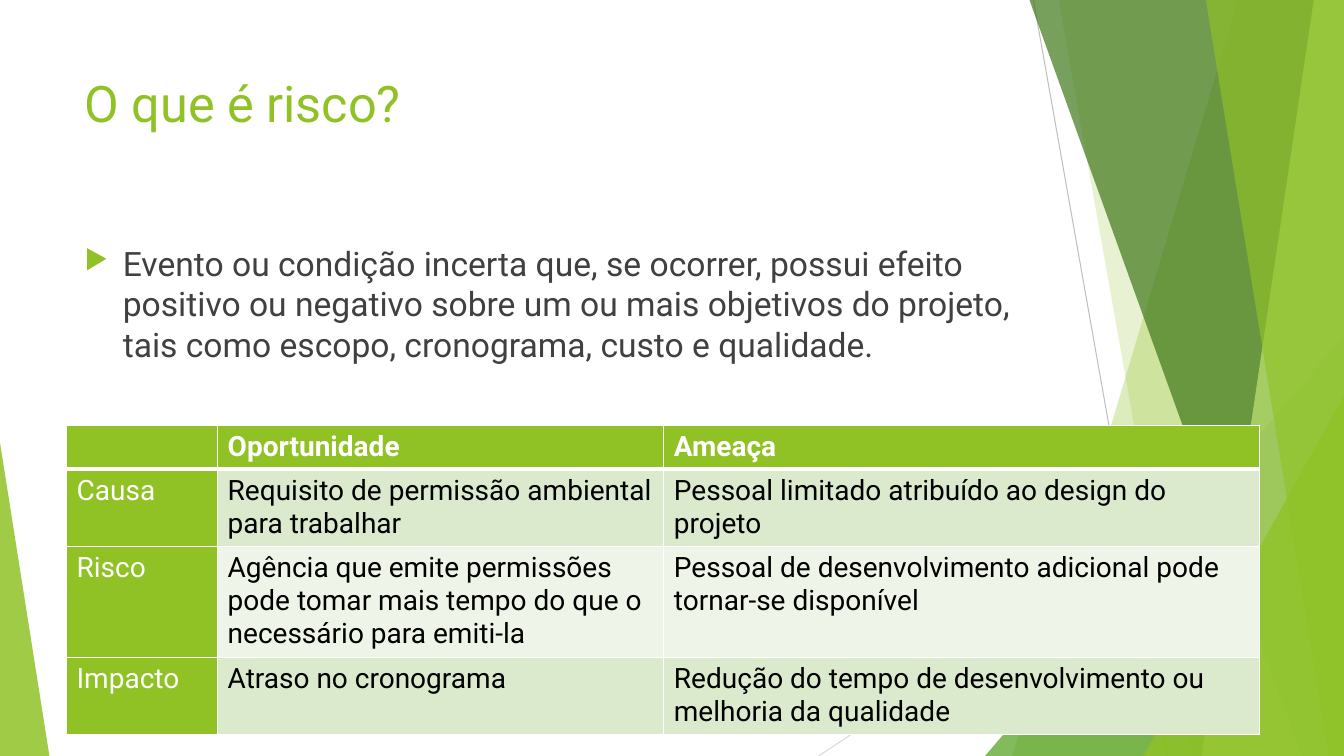
from lxml.etree import SubElement
from pptx import Presentation
from pptx.dml.color import RGBColor
from pptx.enum.shapes import MSO_CONNECTOR, MSO_SHAPE
from pptx.enum.text import MSO_ANCHOR
from pptx.oxml.ns import qn
from pptx.util import Inches, Pt

WIDTH, HEIGHT = 13.33, 7.5
FONT = "Roboto"
COLORS = {
    "green": "90C226",
    "leaf": "54A021",
    "forest": "3F7819",
    "lime": "C0E474",
    "band": "DBE9CD",
    "pale_band": "EEF4E8",
    "text": "404040",
    "black": "000000",
    "white": "FFFFFF",
    "gray": "BFBFBF",
    "light_gray": "D9D9D9",
}
RISK_ROWS = [
    ("", "Oportunidade", "Ameaça"),
    ("Causa", "Requisito de permissão ambiental para trabalhar",
     "Pessoal limitado atribuído ao design do projeto"),
    ("Risco", "Agência que emite permissões pode tomar mais tempo do que o necessário para emiti-la",
     "Pessoal de desenvolvimento adicional pode tornar-se disponível"),
    ("Impacto", "Atraso no cronograma",
     "Redução do tempo de desenvolvimento ou melhoria da qualidade"),
]
COLUMN_SHARES = (1.5, 4.43, 5.91)
ROW_SHARES = (0.41, 0.76, 1.08, 0.76)


def rgb(color):
    return RGBColor.from_string(COLORS[color])


def style_font(paragraph, size, color, bold=False):
    font = paragraph.font
    font.name, font.size, font.bold = FONT, Pt(size), bold
    font.color.rgb = rgb(color)


def paint(facet, color, opacity):
    facet.shadow.inherit = False
    facet.fill.solid()
    facet.fill.fore_color.rgb = rgb(color)
    tint = facet.fill._xPr.find(qn("a:solidFill"))[0]
    SubElement(tint, qn("a:alpha"), val=str(opacity * 1000))
    facet.line.fill.background()


def add_ray(slide, start, end, color):
    ray = slide.shapes.add_connector(
        MSO_CONNECTOR.STRAIGHT, *(Inches(v) for v in (*start, *end)))
    ray.line.color.rgb = rgb(color)
    ray.line.width = Pt(0.75)
    SubElement(ray._element.spPr, qn("a:effectLst"))


def add_blade(slide, box, top_x, bottom_x, color, opacity):
    left, top, width, height = box
    right, bottom = left + width, top + height
    corners = [(Inches(x), Inches(y)) for x, y in (
        (top_x, top), (right, top), (right, bottom), (bottom_x, bottom))]
    outline = slide.shapes.build_freeform(*corners[0])
    outline.add_line_segments(corners[1:], close=True)
    paint(outline.convert_to_shape(), color, opacity)


def add_wedge(slide, box, apex, color, opacity):
    wedge = slide.shapes.add_shape(
        MSO_SHAPE.ISOSCELES_TRIANGLE, *(Inches(v) for v in box))
    wedge.adjustments[0] = apex
    paint(wedge, color, opacity)


def add_backdrop(slide, box):
    left, top, width, height = box
    right, bottom = left + width, top + height

    def corner_wedge(wide, high, color, opacity):
        add_wedge(slide, (right - wide, bottom - high, wide, high), 1, color, opacity)

    add_ray(slide, (right - 3.08, top), (right - 1.75, bottom), "gray")
    add_ray(slide, (right, bottom - 3.47), (right - 5.21, bottom), "light_gray")
    add_blade(slide, box, right - 1.05, right - 3.29, "green", 30)
    add_blade(slide, box, right - 2.83, right - 1.5, "green", 20)
    corner_wedge(3.56, 4.17, "leaf", 72)
    add_blade(slide, box, right - 3.12, right - 0.42, "forest", 70)
    add_blade(slide, box, right - 0.3, right - 1.41, "lime", 70)
    add_blade(slide, box, right - 1.37, right - 0.15, "green", 65)
    corner_wedge(1.99, 3.57, "green", 80)
    add_wedge(slide, (left, bottom - 3.11, 0.49, 3.11), 0, "green", 85)


def add_text(slide, box, text, size, color, anchor=MSO_ANCHOR.TOP):
    frame = slide.shapes.add_textbox(*(Inches(v) for v in box)).text_frame
    frame.word_wrap = True
    frame.vertical_anchor = anchor
    paragraph = frame.paragraphs[0]
    paragraph.text = text
    return paragraph


def add_heading(slide, box):
    heading = add_text(slide, box, "O que é risco?", 36, "green")
    style_font(heading, 36, "green")


def add_definition(slide, box):
    definition = add_text(
        slide, box,
        "Evento ou condição incerta que, se ocorrer, possui efeito positivo ou negativo "
        "sobre um ou mais objetivos do projeto, tais como escopo, cronograma, custo e qualidade.",
        24, "text")
    properties = definition._p.get_or_add_pPr()
    properties.set("marL", str(Inches(0.38)))
    properties.set("indent", str(-Inches(0.38)))
    bullet_color = SubElement(properties, qn("a:buClr"))
    SubElement(bullet_color, qn("a:srgbClr"), val=COLORS["green"])
    SubElement(properties, qn("a:buSzPct"), val="80000")
    SubElement(properties, qn("a:buChar"), char="▶")
    style_font(definition, 24, "text")


def add_borders(cell, bottom_width):
    properties = cell._tc.get_or_add_tcPr()
    for side, width in (("L", 1), ("R", 1), ("T", 1), ("B", bottom_width)):
        border = SubElement(properties, qn(f"a:ln{side}"), w=str(Pt(width)))
        fill = SubElement(border, qn("a:solidFill"))
        SubElement(fill, qn("a:srgbClr"), val=COLORS["white"])


def add_risk_table(slide, box):
    left, top, width, height = box
    table = slide.shapes.add_table(
        len(RISK_ROWS), len(COLUMN_SHARES), *(Inches(v) for v in box)).table
    table.horz_banding = False
    for column, share in zip(table.columns, COLUMN_SHARES):
        column.width = Inches(width * share / sum(COLUMN_SHARES))
    for row, share in zip(table.rows, ROW_SHARES):
        row.height = Inches(height * share / sum(ROW_SHARES))
    for r, texts in enumerate(RISK_ROWS):
        for c, text in enumerate(texts):
            cell = table.cell(r, c)
            is_label = r == 0 or c == 0
            add_borders(cell, 3 if r == 0 else 1)
            cell.fill.solid()
            cell.fill.fore_color.rgb = rgb(
                "green" if is_label else "band" if r % 2 else "pale_band")
            cell.text = text
            style_font(cell.text_frame.paragraphs[0], 20,
                       "white" if is_label else "black", bold=r == 0)


def main():
    presentation = Presentation()
    presentation.slide_width = Inches(WIDTH)
    presentation.slide_height = Inches(HEIGHT)
    slide = presentation.slides.add_slide(presentation.slide_layouts[6])
    add_backdrop(slide, (0, 0, WIDTH, HEIGHT))
    add_heading(slide, (0.74, 0.67, 9.4, 1.44))
    add_definition(slide, (0.74, 2.36, 9.4, 4.24))
    add_risk_table(slide, (0.66, 4.22, 11.83, 3.01))
    presentation.save("out.pptx")


if __name__ == "__main__":
    main()
